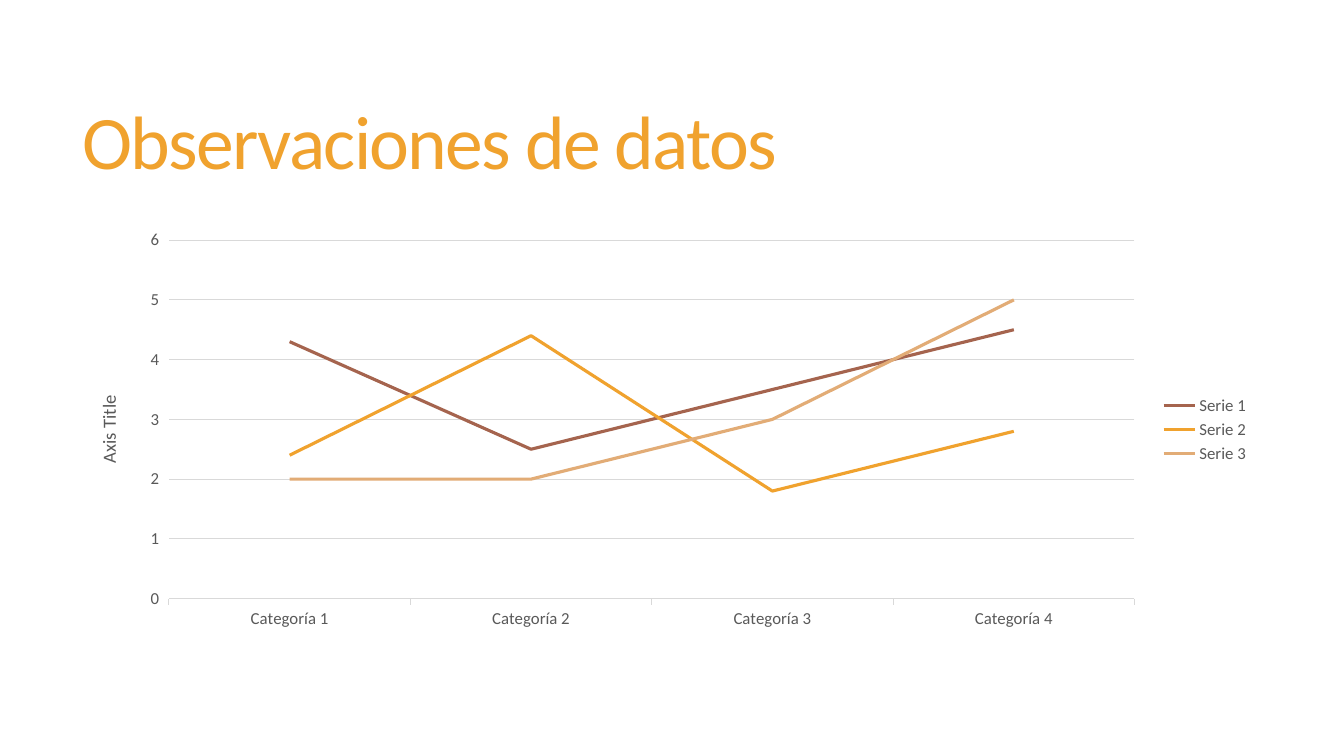
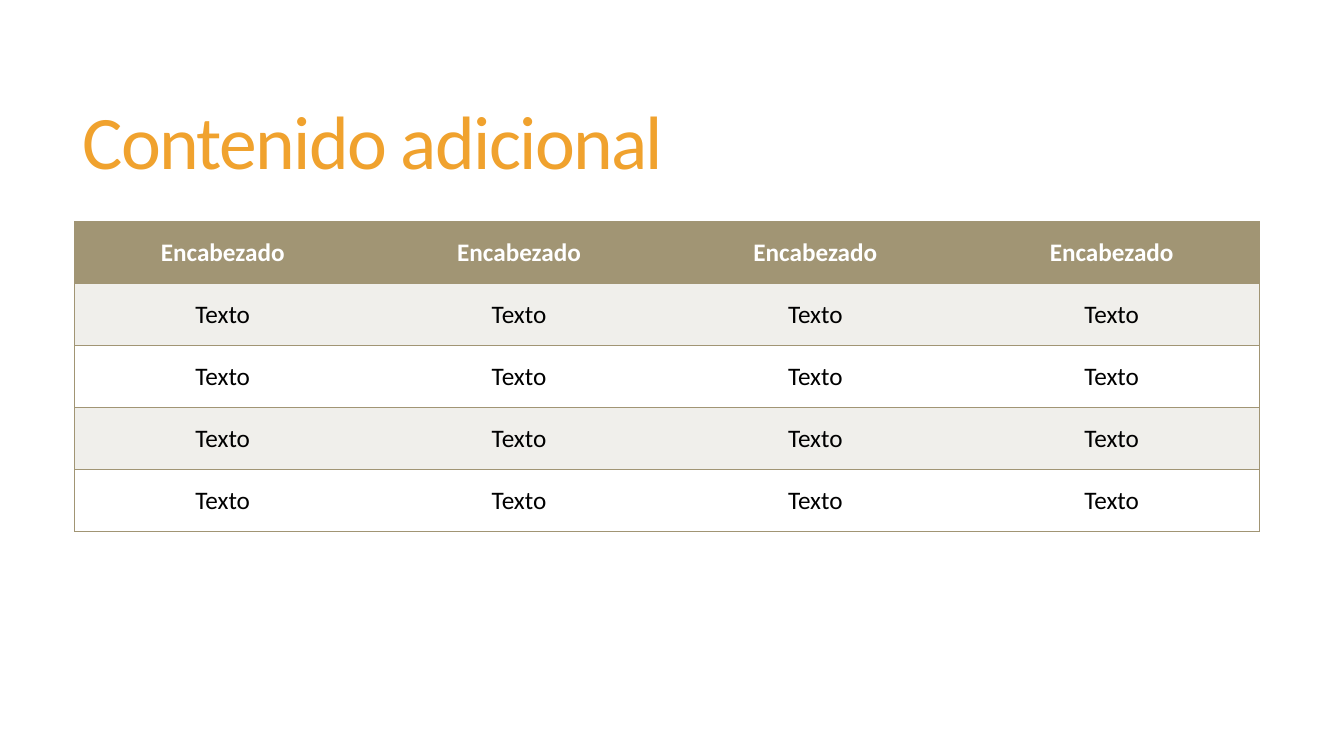
from dataclasses import dataclass

from pptx import Presentation
from pptx.chart.data import CategoryChartData
from pptx.dml.color import RGBColor
from pptx.enum.chart import XL_CHART_TYPE as ChartType, XL_LEGEND_POSITION as LegendSide
from pptx.enum.chart import XL_MARKER_STYLE as Marker, XL_TICK_MARK as Tick
from pptx.enum.text import MSO_ANCHOR as Anchor, PP_ALIGN as Align
from pptx.oxml.ns import qn
from pptx.util import Cm, Pt
from lxml.etree import SubElement

CHART = {
    "title": "Observaciones de datos",
    "axis_title": "Axis Title",
    "categories": ["Categoría 1", "Categoría 2", "Categoría 3", "Categoría 4"],
    "series": [
        ("Serie 1", (4.3, 2.5, 3.5, 4.5), "A5644E"),
        ("Serie 2", (2.4, 4.4, 1.8, 2.8), "F0A22E"),
        ("Serie 3", (2, 2, 3, 5), "E2AC76"),
    ],
}
TABLE = {
    "title": "Contenido adicional",
    "rows": [["Encabezado"] * 4] + [["Texto"] * 4 for _ in range(4)],
}


@dataclass(frozen=True)
class Theme:
    font: str = "Calibri"
    accent: str = "F0A22E"
    header: str = "A19574"
    band: str = "F0EFEB"
    white: str = "FFFFFF"
    black: str = "000000"
    label: str = "595959"
    grid: str = "D9D9D9"
    title_size: float = 54
    cell_size: float = 18
    axis_title_size: float = 13.3
    label_size: float = 12


THEME = Theme()
SLIDE_SIZE = Cm(33.87), Cm(19.05)
TITLE_BOX = Cm(1.83), Cm(1.4), Cm(29.92), Cm(4.6)
CONTENT_LEFT, CONTENT_TOP, CONTENT_WIDTH = Cm(1.88), Cm(5.59), Cm(29.87)
CHART_HEIGHT, ROW_HEIGHT = Cm(10.46), Cm(1.56)


def apply(target, values):
    for name, value in values.items():
        setattr(target, name, value)


def style_font(font, size, color, bold=False):
    apply(font, {"name": THEME.font, "size": Pt(size), "bold": bold})
    font.color.rgb = RGBColor.from_string(color)


def style_line(line, color, width):
    line.color.rgb = RGBColor.from_string(color)
    line.width = Pt(width)


def add_page(deck, title):
    page = deck.slides.add_slide(deck.slide_layouts[6])
    frame = page.shapes.add_textbox(*TITLE_BOX).text_frame
    apply(frame, {"word_wrap": True, "vertical_anchor": Anchor.MIDDLE})
    para = frame.paragraphs[0]
    para.line_spacing = 0.85
    span = para.add_run()
    span.text = title
    style_font(span.font, THEME.title_size, THEME.accent)
    span.font._element.set("spc", "-120")
    return page


def add_line_chart(page, content):
    data = CategoryChartData()
    data.categories = content["categories"]
    for name, values, _ in content["series"]:
        data.add_series(name, values)
    chart = page.shapes.add_chart(
        ChartType.LINE, CONTENT_LEFT, CONTENT_TOP, CONTENT_WIDTH, CHART_HEIGHT, data
    ).chart
    style_font(chart.font, THEME.label_size, THEME.label)
    apply(chart, {"has_title": False, "has_legend": True})
    apply(chart.legend, {"position": LegendSide.RIGHT, "include_in_layout": False})
    chart.plots[0].vary_by_categories = False

    for series, (_, _, color) in zip(chart.plots[0].series, content["series"]):
        series.smooth = False
        series.marker.style = Marker.NONE
        style_line(series.format.line, color, 2.25)

    categories, values = chart.category_axis, chart.value_axis
    for axis in (categories, values):
        apply(axis, {"major_tick_mark": Tick.OUTSIDE, "minor_tick_mark": Tick.NONE})
        style_font(axis.tick_labels.font, THEME.label_size, THEME.label)
    style_line(categories.format.line, THEME.grid, 0.75)
    values.format.line.fill.background()
    values.has_major_gridlines = True
    style_line(values.major_gridlines.format.line, THEME.grid, 0.75)
    frame = values.axis_title.text_frame
    frame.text = content["axis_title"]
    style_font(frame.paragraphs[0].runs[0].font, THEME.axis_title_size, THEME.label)


def set_borders(cell, visible):
    properties = cell._tc.get_or_add_tcPr()
    for side in "LRTB":
        line = SubElement(properties, qn(f"a:ln{side}"), w=str(Pt(1)))
        if side in visible:
            fill = SubElement(line, qn("a:solidFill"))
            SubElement(fill, qn("a:srgbClr"), val=THEME.header)
        else:
            SubElement(line, qn("a:noFill"))


def fill_cell(cell, text, fill, color, bold, borders):
    set_borders(cell, borders)
    cell.fill.solid()
    cell.fill.fore_color.rgb = RGBColor.from_string(fill)
    cell.vertical_anchor = Anchor.MIDDLE
    para = cell.text_frame.paragraphs[0]
    para.alignment = Align.CENTER
    span = para.add_run()
    span.text = text
    style_font(span.font, THEME.cell_size, color, bold)


def add_banded_table(page, rows):
    columns = len(rows[0])
    table = page.shapes.add_table(
        len(rows), columns, CONTENT_LEFT, CONTENT_TOP, CONTENT_WIDTH, ROW_HEIGHT * len(rows)
    ).table
    apply(table, {"first_row": False, "horz_banding": False})
    for r, row in enumerate(rows):
        if r == 0:
            fill, color = THEME.header, THEME.white
        else:
            fill, color = (THEME.band if r % 2 else THEME.white), THEME.black
        for c, text in enumerate(row):
            borders = "TB" + ("L" if c == 0 else "") + ("R" if c == columns - 1 else "")
            fill_cell(table.cell(r, c), text, fill, color, r == 0, borders)


def main():
    deck = Presentation()
    deck.slide_width, deck.slide_height = SLIDE_SIZE
    add_line_chart(add_page(deck, CHART["title"]), CHART)
    add_banded_table(add_page(deck, TABLE["title"]), TABLE["rows"])
    deck.save("out.pptx")


if __name__ == "__main__":
    main()
